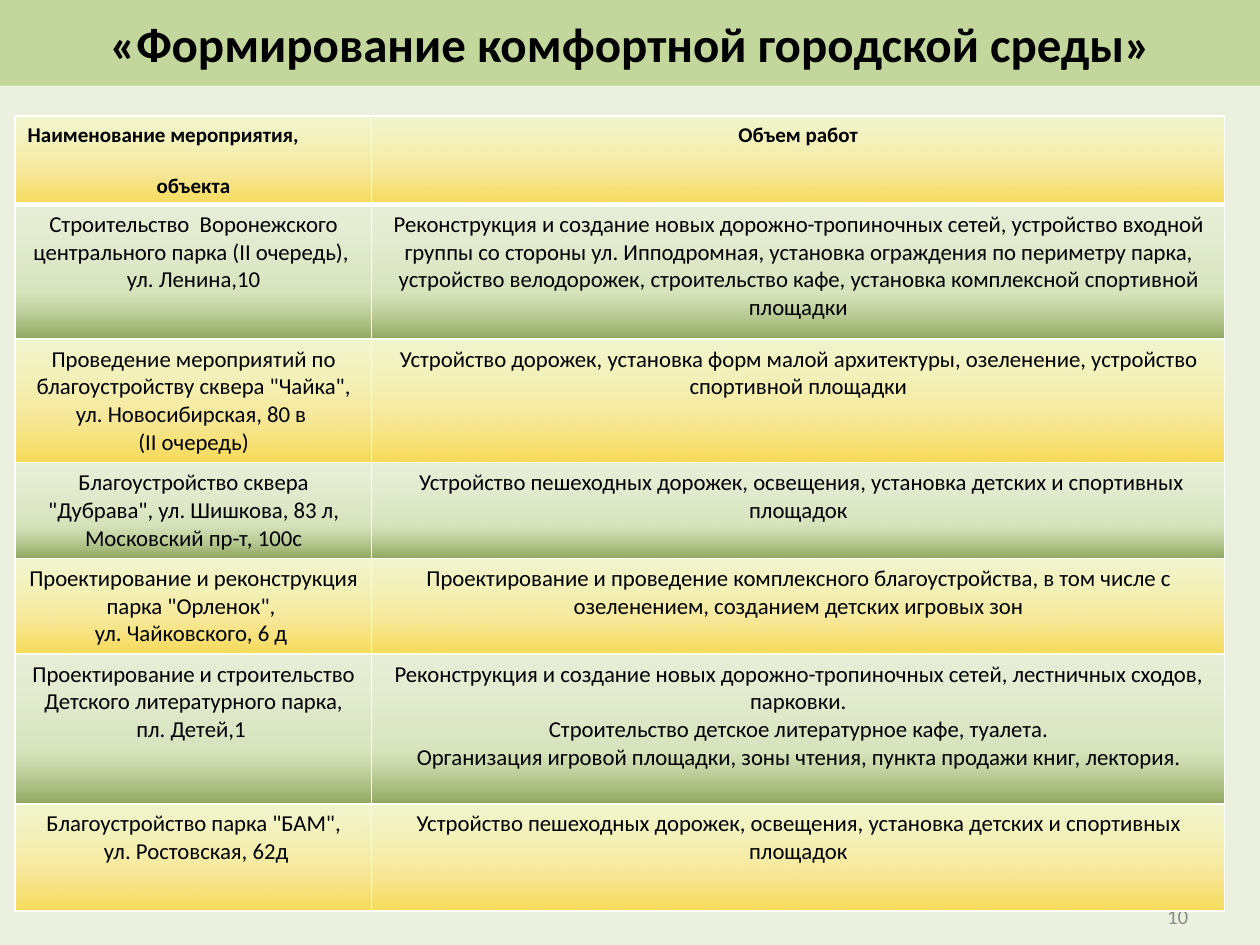
from lxml import etree
from pptx import Presentation
from pptx import util as u
from pptx.dml.color import RGBColor
from pptx.enum import shapes, text
from pptx.oxml import ns

COLORS = {
    "background": "EBF1DE",
    "title": "C3D69B",
    "text": "000000",
    "number": "8C8C8C",
    "border": "FFFFFF",
}
YELLOW = [(0, "FFCC00", 60), (35, "FFE269", 60), (100, "FFFFAB", 30)]
GREEN = [(0, "77933C", 80), (35, "C3D69B", 50), (100, "D7E4BD", 15)]

COLUMN_WIDTHS = [2.83, 6.77]
ROW_HEIGHTS = [0.7, 1.07, 0.98, 0.76, 0.76, 1.19, 0.85]
ROWS = [
    (["Наименование мероприятия,", "объекта"], ["Объем работ"]),
    (
        ["Строительство  Воронежского центрального парка (II очередь), ", "ул. Ленина,10"],
        ["Реконструкция и создание новых дорожно-тропиночных сетей, устройство входной "
         "группы со стороны ул. Ипподромная, установка ограждения по периметру парка, "
         "устройство велодорожек, строительство кафе, установка комплексной спортивной площадки"],
    ),
    (
        ['Проведение мероприятий по благоустройству сквера "Чайка", ул. Новосибирская, 80 в ',
         "(II очередь)"],
        ["Устройство дорожек, установка форм малой архитектуры, озеленение, "
         "устройство спортивной площадки"],
    ),
    (
        ['Благоустройство сквера "Дубрава", ул. Шишкова, 83 л, Московский пр-т, 100с'],
        [" Устройство пешеходных дорожек, освещения, установка детских и спортивных площадок"],
    ),
    (
        ['Проектирование и реконструкция парка "Орленок", ', "ул. Чайковского, 6 д "],
        ["Проектирование и проведение комплексного благоустройства, в том числе с "
         "озеленением, созданием детских игровых зон"],
    ),
    (
        ["Проектирование и строительство Детского литературного парка, пл. Детей,1 "],
        ["Реконструкция и создание новых дорожно-тропиночных сетей, лестничных сходов, парковки.",
         "Строительство детское литературное кафе, туалета.",
         "Организация игровой площадки, зоны чтения, пункта продажи книг, лектория."],
    ),
    (
        ['Благоустройство парка "БАМ",', " ул. Ростовская, 62д"],
        ["Устройство пешеходных дорожек, освещения, установка детских и спортивных площадок"],
    ),
]


def write(frame, lines, size, color, bold=False, align=text.PP_ALIGN.CENTER):
    frame.word_wrap = True
    for index, line in enumerate(lines):
        para = frame.paragraphs[0] if index == 0 else frame.add_paragraph()
        para.alignment = align
        span = para.add_run()
        span.text = line
        span.font.name = "Calibri"
        span.font.size = u.Pt(size)
        span.font.bold = bold
        span.font.color.rgb = RGBColor.from_string(COLORS[color])


def style_cell(cell, stops, top, bottom):
    props = cell._tc.get_or_add_tcPr()
    for side, width in (("L", 1), ("R", 1), ("T", top), ("B", bottom)):
        line = etree.SubElement(props, ns.qn("a:ln" + side), w=str(u.Pt(width)))
        solid = etree.SubElement(line, ns.qn("a:solidFill"))
        etree.SubElement(solid, ns.qn("a:srgbClr"), val=COLORS["border"])
    fill = etree.SubElement(props, ns.qn("a:gradFill"), rotWithShape="1")
    stop_list = etree.SubElement(fill, ns.qn("a:gsLst"))
    for position, color, opacity in stops:
        stop = etree.SubElement(stop_list, ns.qn("a:gs"), pos=str(position * 1000))
        shade = etree.SubElement(stop, ns.qn("a:srgbClr"), val=color)
        etree.SubElement(shade, ns.qn("a:alpha"), val=str(opacity * 1000))
    etree.SubElement(fill, ns.qn("a:lin"), ang=str(270 * 60000), scaled="0")


deck = Presentation()
deck.slide_width = u.Inches(10)
deck.slide_height = u.Inches(7.5)
page = deck.slides.add_slide(deck.slide_layouts[6])
page.background.fill.solid()
page.background.fill.fore_color.rgb = RGBColor.from_string(COLORS["background"])

title = page.shapes.add_shape(
    shapes.MSO_SHAPE.RECTANGLE, 0, 0, u.Inches(10), u.Inches(0.68))
title.shadow.inherit = False
title.fill.solid()
title.fill.fore_color.rgb = RGBColor.from_string(COLORS["title"])
title.line.fill.background()
title.text_frame.vertical_anchor = text.MSO_ANCHOR.MIDDLE
write(title.text_frame, ["«Формирование комфортной городской среды»"], 28, "text", True)

number = page.shapes.add_textbox(
    u.Inches(7.2), u.Inches(7.07), u.Inches(2.33), u.Inches(0.4))
number.text_frame.vertical_anchor = text.MSO_ANCHOR.MIDDLE
write(number.text_frame, ["10"], 12, "number", align=text.PP_ALIGN.RIGHT)

table = page.shapes.add_table(
    len(ROWS), len(COLUMN_WIDTHS), u.Inches(0.12), u.Inches(0.92),
    u.Inches(sum(COLUMN_WIDTHS)), u.Inches(sum(ROW_HEIGHTS))).table
for column, width in zip(table.columns, COLUMN_WIDTHS):
    column.width = u.Inches(width)
for index, (height, contents) in enumerate(zip(ROW_HEIGHTS, ROWS)):
    table.rows[index].height = u.Inches(height)
    header = index == 0
    for cell, lines in zip(table.rows[index].cells, contents):
        write(cell.text_frame, lines, 12 if header else 13, "text", header)
        style_cell(cell, GREEN if index % 2 else YELLOW,
                   3 if index == 1 else 1, 3 if header else 1)

name_para, object_para = table.cell(0, 0).text_frame.paragraphs
name_para.alignment = text.PP_ALIGN.LEFT
object_para.space_before = u.Pt(14.5)

deck.save("out.pptx")
